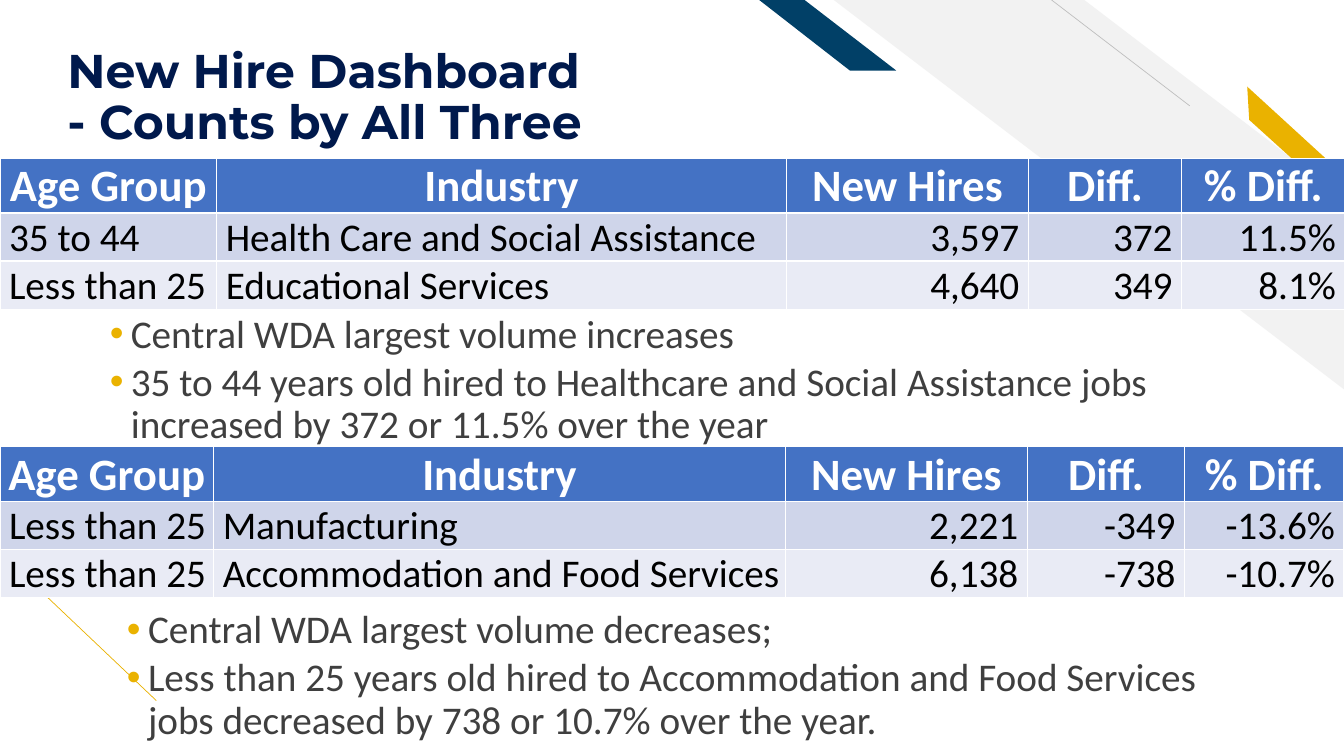
from dataclasses import dataclass

from lxml import etree
from pptx import Presentation
from pptx.dml.color import RGBColor
from pptx.enum.shapes import MSO_CONNECTOR, MSO_SHAPE
from pptx.enum.text import MSO_ANCHOR, PP_ALIGN
from pptx.oxml.ns import qn
from pptx.util import Inches, Pt

STRAIGHT = MSO_CONNECTOR.STRAIGHT
STRIPE = MSO_SHAPE.DIAGONAL_STRIPE
TOP, MIDDLE, BOTTOM = MSO_ANCHOR.TOP, MSO_ANCHOR.MIDDLE, MSO_ANCHOR.BOTTOM
LEFT, CENTER, RIGHT = PP_ALIGN.LEFT, PP_ALIGN.CENTER, PP_ALIGN.RIGHT


@dataclass(frozen=True)
class Theme:
    """Colours, fonts and type sizes of the slide."""

    white: str = "FFFFFF"
    black: str = "000000"
    navy: str = "00194C"
    teal: str = "014067"
    gold: str = "EAB200"
    pale: str = "F2F2F2"
    grey: str = "BFBFBF"
    body_text: str = "3F3F3F"
    header: str = "4472C4"
    bands: tuple = ("CFD5EA", "E9EBF5")
    title_font: str = "Montserrat"
    body_font: str = "Calibri"
    title_size: float = 33.8
    header_size: float = 32
    body_size: float = 28


class Deck:
    """Draws styled elements on the current slide."""

    def __init__(self, theme):
        self.t = theme
        self.prs = Presentation()
        self.prs.slide_width, self.prs.slide_height = Inches(13.33), Inches(7.5)
        self.s = self.prs.slides.add_slide(self.prs.slide_layouts[6])

    def apply(self, obj, formats):
        """Set each named attribute on an object."""
        for name, value in formats.items():
            setattr(obj, name, value)

    def style_font(self, font, family, size, color, bold=False):
        """Format a font."""
        self.apply(font, {"name": family, "size": Pt(size), "bold": bold})
        font.color.rgb = RGBColor.from_string(color)

    def set_frame(self, tf, anchor, margins):
        """Set the anchor and the left, top, right and bottom margins."""
        sides = ("margin_left", "margin_top", "margin_right", "margin_bottom")
        self.apply(tf, dict(zip(sides, map(Inches, margins))))
        self.apply(tf, {"vertical_anchor": anchor, "word_wrap": True})

    def paint(self, sp, color):
        """Give a shape a plain fill without line or shadow."""
        sp.shadow.inherit = False
        sp.fill.solid()
        sp.fill.fore_color.rgb = RGBColor.from_string(color)
        sp.line.fill.background()

    def stripe(self, box, ratio, color):
        """Add a mirrored diagonal stripe."""
        sp = self.s.shapes.add_shape(STRIPE, *map(Inches, box))
        sp.adjustments[0] = ratio
        sp._element.spPr.find(qn("a:xfrm")).set("flipH", "1")
        self.paint(sp, color)

    def polygon(self, points, color):
        """Add a closed outline through points in inches."""
        start, *rest = [(Inches(x), Inches(y)) for x, y in points]
        builder = self.s.shapes.build_freeform(*start)
        builder.add_line_segments(rest, close=True)
        self.paint(builder.convert_to_shape(), color)

    def line(self, begin, end, color):
        """Add a thin straight line."""
        sp = self.s.shapes.add_connector(STRAIGHT, *map(Inches, begin + end))
        sp.line.width = Pt(0.5)
        sp.line.color.rgb = RGBColor.from_string(color)
        etree.SubElement(sp._element.spPr, qn("a:effectLst"))

    def title(self, box, text):
        """Add the slide title."""
        tf = self.s.shapes.add_textbox(*map(Inches, box)).text_frame
        self.set_frame(tf, BOTTOM, (0.1, 0.05, 0.1, 0))
        p = tf.paragraphs[0]
        p.line_spacing = 0.9
        p.text = text
        for r in p.runs:
            self.style_font(r.font, self.t.title_font, self.t.title_size, self.t.navy, True)

    def bullets(self, box, items):
        """Add a bulleted list."""
        tf = self.s.shapes.add_textbox(*map(Inches, box)).text_frame
        self.set_frame(tf, TOP, (0.1, 0.05, 0.1, 0.05))
        for i, item in enumerate(items):
            p = tf.add_paragraph() if i else tf.paragraphs[0]
            pPr = p._p.get_or_add_pPr()
            pPr.set("marL", str(Inches(0.63)))
            pPr.set("indent", str(Inches(-0.21)))
            clr = etree.SubElement(pPr, qn("a:buClr"))
            etree.SubElement(clr, qn("a:srgbClr")).set("val", self.t.gold)
            etree.SubElement(pPr, qn("a:buFont")).set("typeface", "Arial")
            etree.SubElement(pPr, qn("a:buChar")).set("char", "•")
            self.apply(p, {"level": 1, "line_spacing": 0.9, "space_before": Pt(4.2 if i else 0)})
            r = p.add_run()
            r.text = item
            self.style_font(r.font, self.t.body_font, self.t.body_size, self.t.body_text)

    def borders(self, cell, top, bottom):
        """Draw the white borders of a cell."""
        tcPr = cell._tc.get_or_add_tcPr()
        for side, width in (("L", 1), ("R", 1), ("T", top), ("B", bottom)):
            ln = etree.SubElement(tcPr, qn("a:ln" + side), w=str(Pt(width)))
            fill = etree.SubElement(ln, qn("a:solidFill"))
            etree.SubElement(fill, qn("a:srgbClr")).set("val", self.t.white)

    def cell(self, cell, text, row, col):
        """Fill and format one table cell."""
        t = self.t
        if row == 0:
            align, margins, fill = CENTER, (0.01, 0.01, 0.01, 0), t.header
            look = (t.header_size, t.white, True)
        else:
            fill, look = t.bands[row - 1], (t.body_size, t.black)
            align = LEFT if col < 2 else RIGHT
            margins = (0.09, 0.01, 0.01, 0) if col < 2 else (0.01, 0.01, 0.09, 0)
        self.set_frame(cell, MIDDLE, margins)
        self.borders(cell, 1.5 if row == 2 else 1, 1.5 if row == 1 else 1)
        cell.fill.solid()
        cell.fill.fore_color.rgb = RGBColor.from_string(fill)
        p = cell.text_frame.paragraphs[0]
        p.alignment = align
        r = p.add_run()
        r.text = text
        self.style_font(r.font, t.body_font, *look)

    def table(self, top, widths, rows):
        """Add a full-width table under the shared header."""
        rows = [HEADER, *rows]
        box = map(Inches, (0, top, 13.33, 1.5))
        tbl = self.s.shapes.add_table(len(rows), len(widths), *box).table
        for col, width in zip(tbl.columns, widths):
            col.width = Inches(width)
        for row, height in zip(tbl.rows, (0.47, 0.42, 0.43)):
            row.height = Inches(height)
        for i, row in enumerate(rows):
            for j, text in enumerate(row):
                self.cell(tbl.cell(i, j), text, i, j)


HEADER = ("Age Group", "Industry", "New Hires", "Diff.", "% Diff.")
INCREASES = [
    ("35 to 44", "Health Care and Social Assistance", "3,597", "372", "11.5%"),
    ("Less than 25", "Educational Services", "4,640", "349", "8.1%"),
]
DECREASES = [
    ("Less than 25", "Manufacturing", "2,221", "-349", "-13.6%"),
    ("Less than 25", "Accommodation and Food Services", "6,138", "-738", "-10.7%"),
]


def main():
    """Build and save the slide."""
    t = Theme()
    deck = Deck(t)
    deck.stripe((8.27, 0, 5.07, 3.87), 0.51, t.pale)
    deck.line((11.8, 1.05), (10.43, 0), t.grey)
    deck.polygon([(13.35, 2.06), (13.32, 1.73), (12.37, 0.86), (12.39, 1.19)], t.gold)
    deck.polygon([(8.89, 0.7), (7.98, 0), (7.53, 0), (8.43, 0.7)], t.teal)
    deck.line((1.55, 6.95), (-0.02, 5.46), t.gold)
    deck.title((0.57, 0.23, 9.11, 1.26), "New Hire Dashboard\v- Counts by All Three")
    deck.table(1.57, (2.15, 5.65, 2.4, 1.52, 1.62), INCREASES)
    deck.bullets((0.57, 3.07, 11.85, 1.5), [
        "Central WDA largest volume increases",
        "35 to 44 years old hired to Healthcare and Social Assistance jobs "
        "increased by 372 or 11.5% over the year",
    ])
    deck.table(4.43, (2.12, 5.67, 2.4, 1.56, 1.58), DECREASES)
    deck.bullets((0.74, 6, 11.85, 1.5), [
        "Central WDA largest volume decreases;",
        "Less than 25 years old hired to Accommodation and Food Services "
        "jobs decreased by 738 or 10.7% over the year.",
    ])
    deck.prs.save("out.pptx")


if __name__ == "__main__":
    main()
